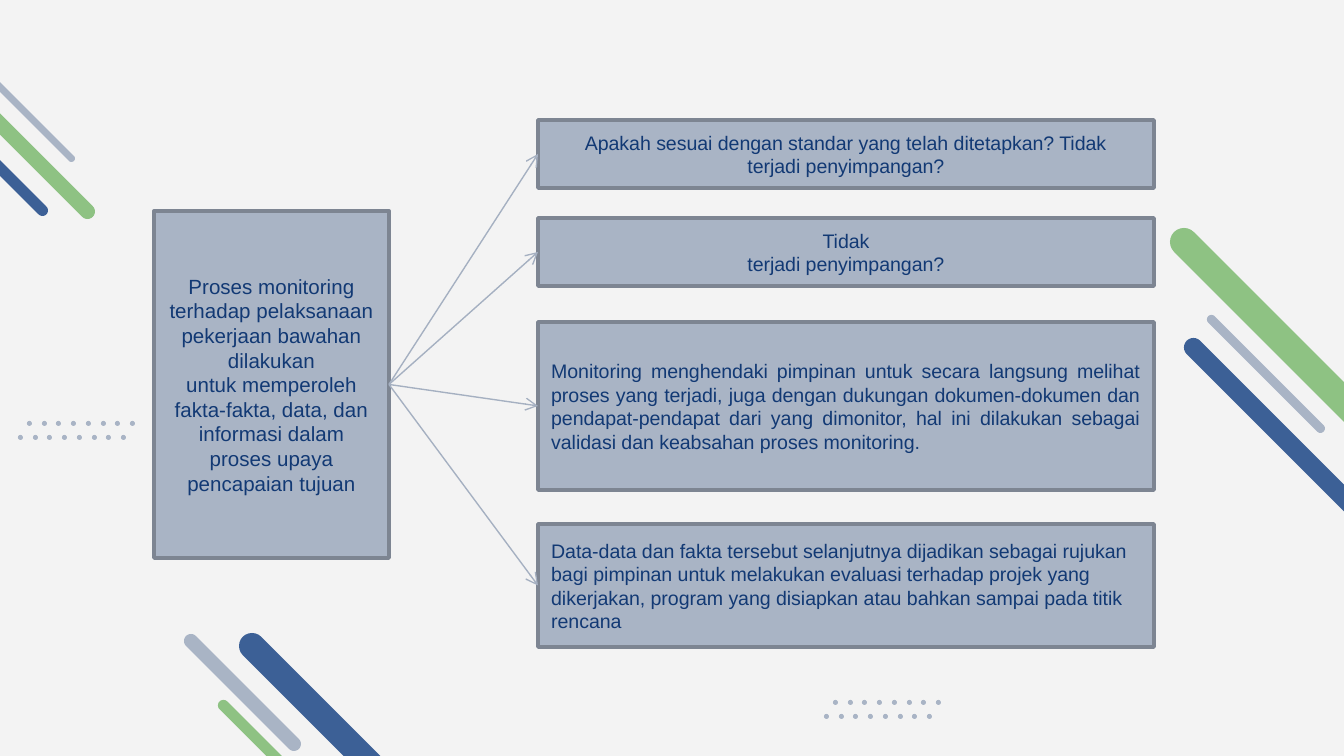
"""Build a slide on the monitoring process and its four follow-up points."""
import math

from lxml import etree
from pptx import Presentation
from pptx import util as u
from pptx.dml.color import RGBColor
from pptx.enum import shapes, text
from pptx.oxml.ns import qn

PX = 914400 / 134.4
COLORS = {
    "paper": "F3F3F3",
    "grey": "A9B4C5",
    "green": "8EC283",
    "blue": "3C6096",
    "border": "7D8592",
    "arrow": "A5B0C1",
    "ink": "123974",
}


def px(value):
    return u.Emu(round(value * PX))


def paint(fill, color):
    fill.solid()
    fill.fore_color.rgb = RGBColor.from_string(COLORS[color])


deck = Presentation()
deck.slide_width, deck.slide_height = px(1344), px(756)
page = deck.slides.add_slide(deck.slide_layouts[6])
paint(page.background.fill, "paper")

stripes = [
    (218, 700, 138, 11, "green"),
    (184, 634, 117, 14, "grey"),
    (239, 633, 275, 26, "blue"),
    (-16, 71, 91, 7, "grey"),
    (-93, 75, 141, 11, "blue"),
    (-102, 22, 197, 15, "green"),
    (1207, 315, 118, 9, "grey"),
    (1184, 338, 256, 19, "blue"),
    (1170, 228, 229, 28, "green"),
]
for left, top, size, thickness, color in stripes:
    radius = thickness / 2
    outline = []
    for start, offset in ((135, radius), (-45, size - radius)):
        for step in range(0, 181, 15):
            angle = math.radians(start + step)
            outline.append((px(left + offset + radius * math.cos(angle)),
                            px(top + offset + radius * math.sin(angle))))
    builder = page.shapes.build_freeform(*outline[0], scale=1.0)
    builder.add_line_segments(outline[1:], close=True)
    stripe = builder.convert_to_shape()
    paint(stripe.fill, color)
    stripe.line.fill.background()
    stripe.shadow.inherit = False

for left, top in ((833, 700), (27, 421)):
    dots = page.shapes.add_group_shape()
    for row in range(2):
        for column in range(8):
            dot = dots.shapes.add_shape(
                shapes.MSO_SHAPE.OVAL, px(left - 9 * row + round(column * 14.7)),
                px(top + 14 * row), px(5), px(5))
            paint(dot.fill, "grey")
            dot.line.fill.background()
            dot.shadow.inherit = False

center, justify, start = (text.PP_ALIGN.CENTER, text.PP_ALIGN.JUSTIFY,
                          text.PP_ALIGN.LEFT)
cards = [
    (154, 211, 235, 347, 11, center,
     "Proses monitoring terhadap pelaksanaan pekerjaan bawahan dilakukan\n"
     "untuk memperoleh fakta-fakta, data, dan informasi dalam proses upaya\n"
     "pencapaian tujuan"),
    (538, 120, 616, 68, 10.5, center,
     "Apakah sesuai dengan standar yang telah ditetapkan? Tidak\n"
     "terjadi penyimpangan?"),
    (538, 218, 616, 68, 10.5, center, "Tidak\nterjadi penyimpangan?"),
    (538, 322, 616, 168, 10.5, justify,
     "Monitoring menghendaki pimpinan untuk secara langsung melihat proses "
     "yang terjadi, juga dengan dukungan dokumen-dokumen dan "
     "pendapat-pendapat dari yang dimonitor, hal ini dilakukan sebagai "
     "validasi dan keabsahan proses monitoring."),
    (538, 524, 616, 123, 10.5, start,
     "Data-data dan fakta tersebut selanjutnya dijadikan sebagai rujukan "
     "bagi pimpinan untuk melakukan evaluasi terhadap projek yang "
     "dikerjakan, program yang disiapkan atau bahkan sampai pada titik "
     "rencana"),
]
boxes = []
for left, top, width, height, size, align, words in cards:
    box = page.shapes.add_shape(shapes.MSO_SHAPE.RECTANGLE,
                                px(left), px(top), px(width), px(height))
    paint(box.fill, "grey")
    paint(box.line.fill, "border")
    box.line.width = u.Pt(2)
    box.shadow.inherit = False
    frame = box.text_frame
    frame.word_wrap = True
    frame.vertical_anchor = text.MSO_ANCHOR.MIDDLE
    frame.text = words
    for para in frame.paragraphs:
        para.alignment = align
        for span in para.runs:
            span.font.name = "Arial"
            span.font.size = u.Pt(size)
            paint(span.font.fill, "ink")
    boxes.append(box)

process, *points = boxes
for point in points:
    arrow = page.shapes.add_connector(shapes.MSO_CONNECTOR.STRAIGHT, 0, 0, 0, 0)
    arrow.begin_connect(process, 3)
    arrow.end_connect(point, 1)
    paint(arrow.line.fill, "arrow")
    arrow.line.width = u.Pt(0.75)
    etree.SubElement(arrow.line._get_or_add_ln(), qn("a:tailEnd"), type="arrow")
    etree.SubElement(arrow._element.spPr, qn("a:effectLst"))

deck.save("out.pptx")
